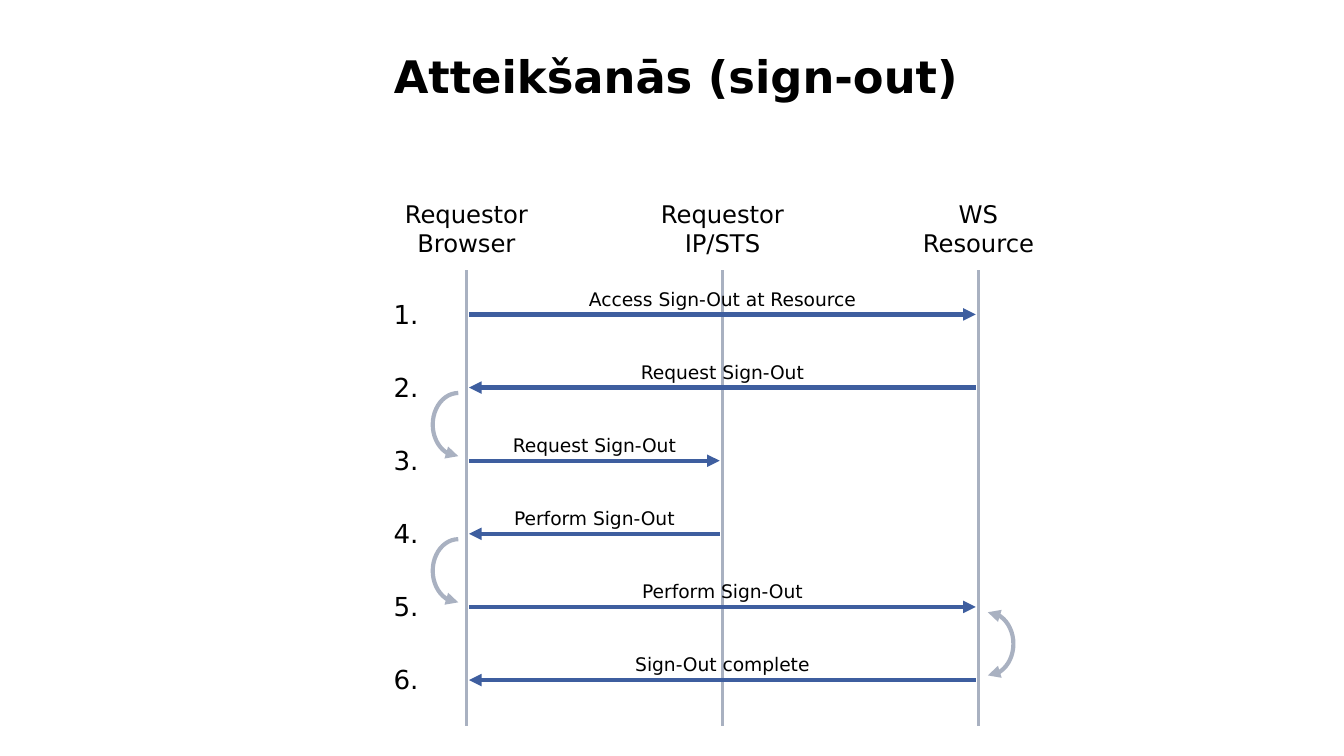
from pptx import Presentation
from pptx.dml.color import RGBColor
from pptx.enum import shapes, text
from pptx.oxml.ns import qn
from pptx.util import Inches, Pt
from lxml import etree

FONT = "DejaVu Sans"
BLACK, GREY, BLUE = "000000", "A9B1C1", "3E5E9F"
LEFT, CENTER = text.PP_ALIGN.LEFT, text.PP_ALIGN.CENTER

prs = Presentation()
prs.slide_width, prs.slide_height = Inches(10), Inches(10 * 9 / 16)
slide = prs.slides.add_slide(prs.slide_layouts[5])


def add_label(lines, center, top, width, height, size, align=CENTER):
    box = slide.shapes.add_textbox(
        Inches(center - width / 2), Inches(top), Inches(width), Inches(height))
    frame = box.text_frame
    frame.word_wrap = False
    frame.auto_size = text.MSO_AUTO_SIZE.SHAPE_TO_FIT_TEXT
    for i, line in enumerate(lines):
        paragraph = frame.paragraphs[0] if i == 0 else frame.add_paragraph()
        paragraph.alignment = align
        run = paragraph.add_run()
        run.text = line
        run.font.name, run.font.size = FONT, Pt(size)
        run.font.color.rgb = RGBColor.from_string(BLACK)


def style_line(shape, color, width, *ends):
    """Colour an outline, remove its shadow and put triangles on the named ends."""
    shape.line.color.rgb = RGBColor.from_string(color)
    shape.line.width = Pt(width)
    properties = shape._element.spPr
    if properties.find(qn("a:effectLst")) is None:
        etree.SubElement(properties, qn("a:effectLst"))
    for end in ends:
        etree.SubElement(shape.line._get_or_add_ln(), qn(f"a:{end}"), type="triangle")


title = slide.shapes.title
title.left, title.top = Inches(2.83), Inches(0.31)
title.width, title.height = Inches(6.67), Inches(0.85)
title.text_frame.vertical_anchor = text.MSO_ANCHOR.TOP
heading = title.text_frame.paragraphs[0]
heading.alignment = LEFT
heading_run = heading.add_run()
heading_run.text = "Atteikšanās (sign-out)"
heading_run.font.name, heading_run.font.size = FONT, Pt(24)
heading_run.font.bold = True
heading_run.font.color.rgb = RGBColor.from_string(BLACK)

# Lifelines: the middle one stands halfway between the outer two
browser, resource = 3.47, 7.28
sts = (browser + resource) / 2
participants = [
    (("Requestor", "Browser"), browser, 1.12),
    (("Requestor", "IP/STS"), sts, 1.12),
    (("WS", "Resource"), resource, 1.03),
]
for name, x, width in participants:
    lifeline = slide.shapes.add_connector(
        shapes.MSO_CONNECTOR.STRAIGHT, Inches(x), Inches(2.01), Inches(x), Inches(5.4))
    style_line(lifeline, GREY, 1.5)
    add_label(name, x, 1.43, width, 0.54, 13)

# Messages: wording, sender, receiver, label width
messages = [
    ("Access Sign-Out at Resource", browser, resource, 2.24),
    ("Request Sign-Out", resource, browser, 1.46),
    ("Request Sign-Out", browser, sts, 1.46),
    ("Perform Sign-Out", sts, browser, 1.44),
    ("Perform Sign-Out", browser, resource, 1.44),
    ("Sign-Out complete", resource, browser, 1.53),
]
first_y, last_y = 2.34, 5.06
step = (last_y - first_y) / (len(messages) - 1)
gap = 0.02
for i, (wording, sender, receiver, width) in enumerate(messages):
    y = first_y + i * step
    inset = gap if sender < receiver else -gap
    add_label([f"{i + 1}."], 3.03, y - 0.17, 0.4, 0.34, 14, LEFT)
    arrow = slide.shapes.add_connector(
        shapes.MSO_CONNECTOR.STRAIGHT,
        Inches(sender + inset), Inches(y), Inches(receiver - inset), Inches(y))
    style_line(arrow, BLUE, 2.25, "tailEnd")
    add_label([wording], (sender + receiver) / 2, y - 0.25, width, 0.27, 10)

# Local processing: row it follows, left edge, rotation, arrowheads
for row, left, rotation, ends in [
    (1, 3.22, 180, ["headEnd"]),
    (3, 3.22, 180, ["headEnd"]),
    (4, 7.35, 0, ["headEnd", "tailEnd"]),
]:
    loop = slide.shapes.add_shape(
        shapes.MSO_SHAPE.RIGHT_BRACKET, Inches(left),
        Inches(first_y + row * step + 0.04), Inches(0.19), Inches(0.47))
    loop.adjustments[0] = 6.25
    loop.rotation = rotation
    loop.shadow.inherit = False
    loop.fill.background()
    style_line(loop, GREY, 2.25, *ends)

prs.save("out.pptx")
